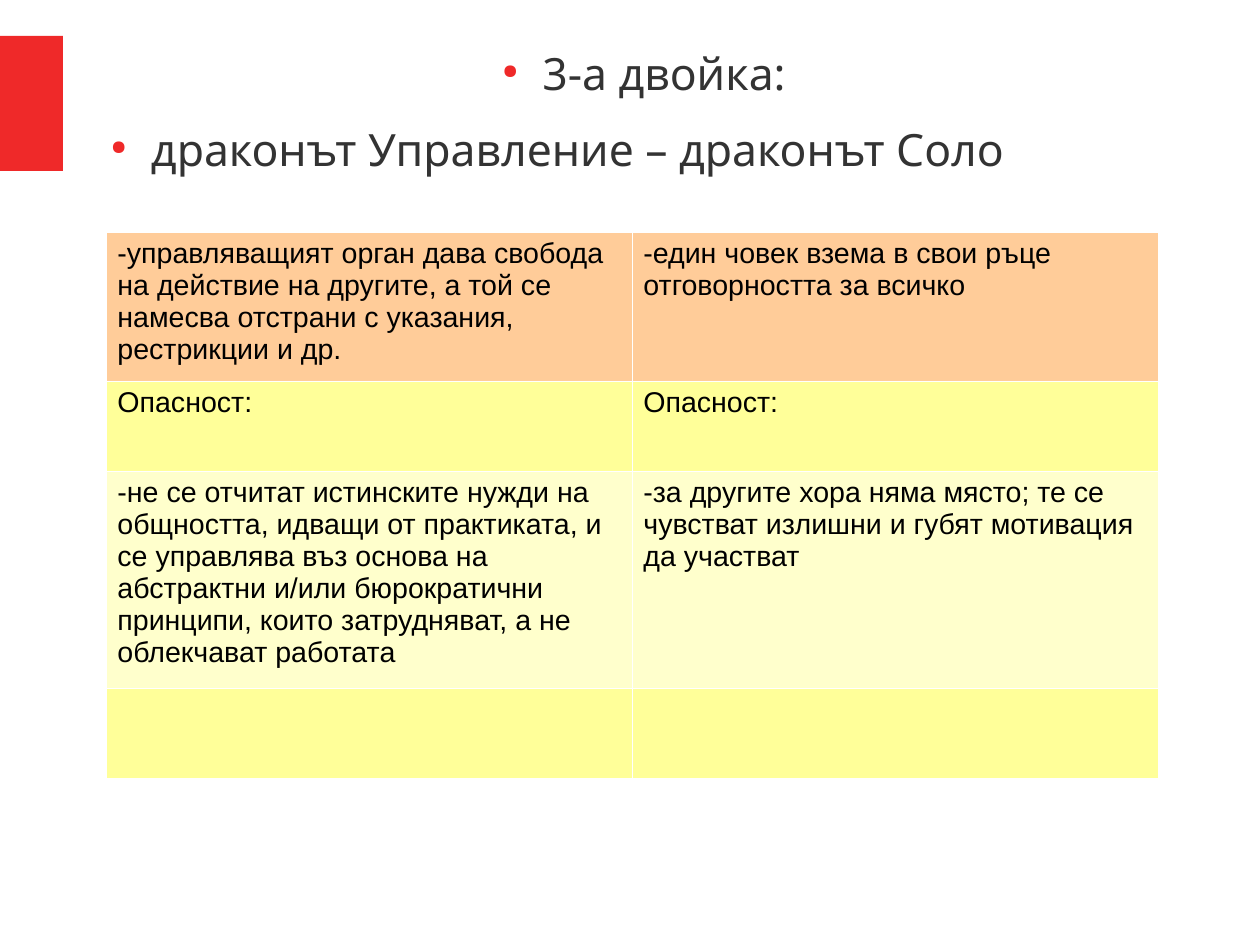
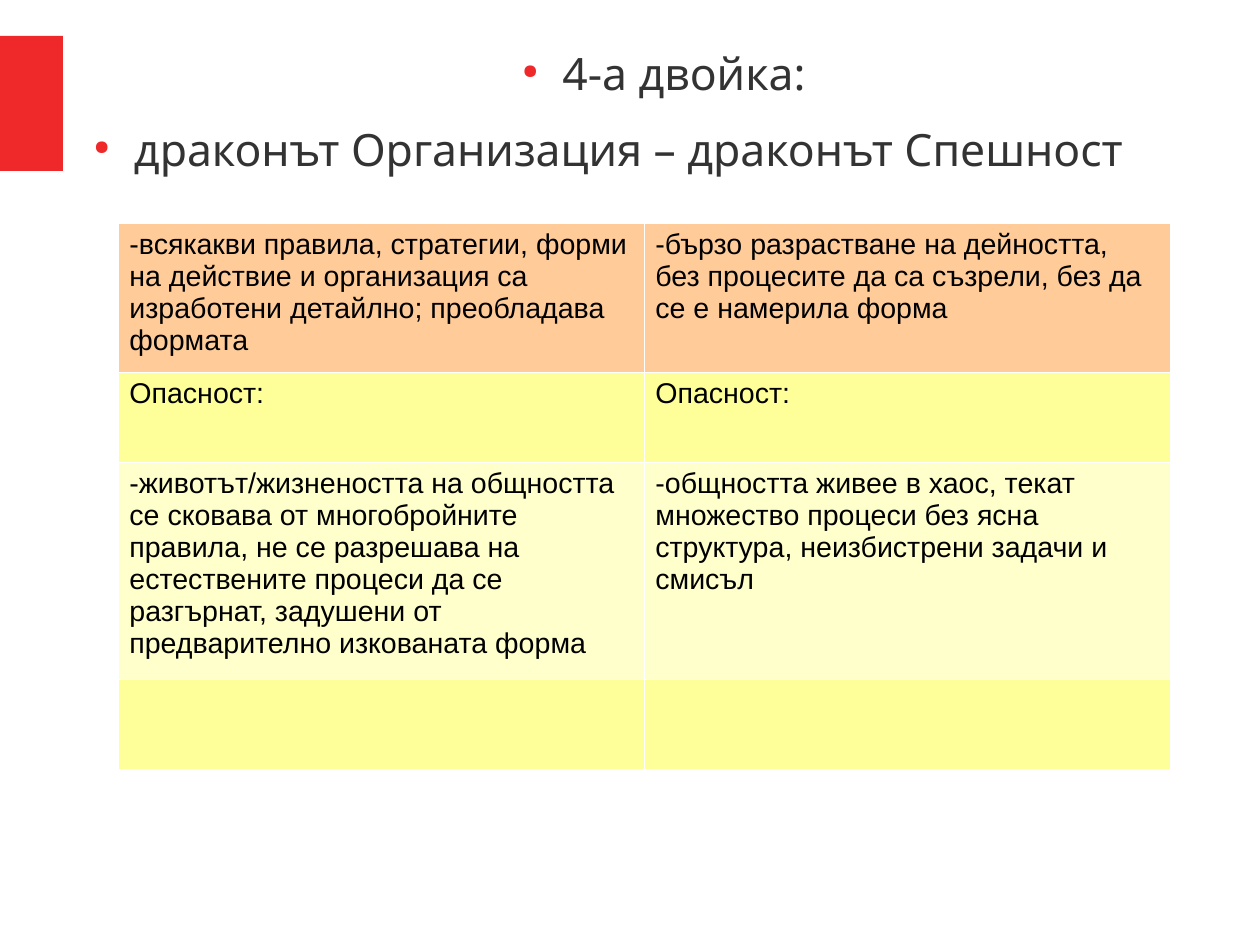
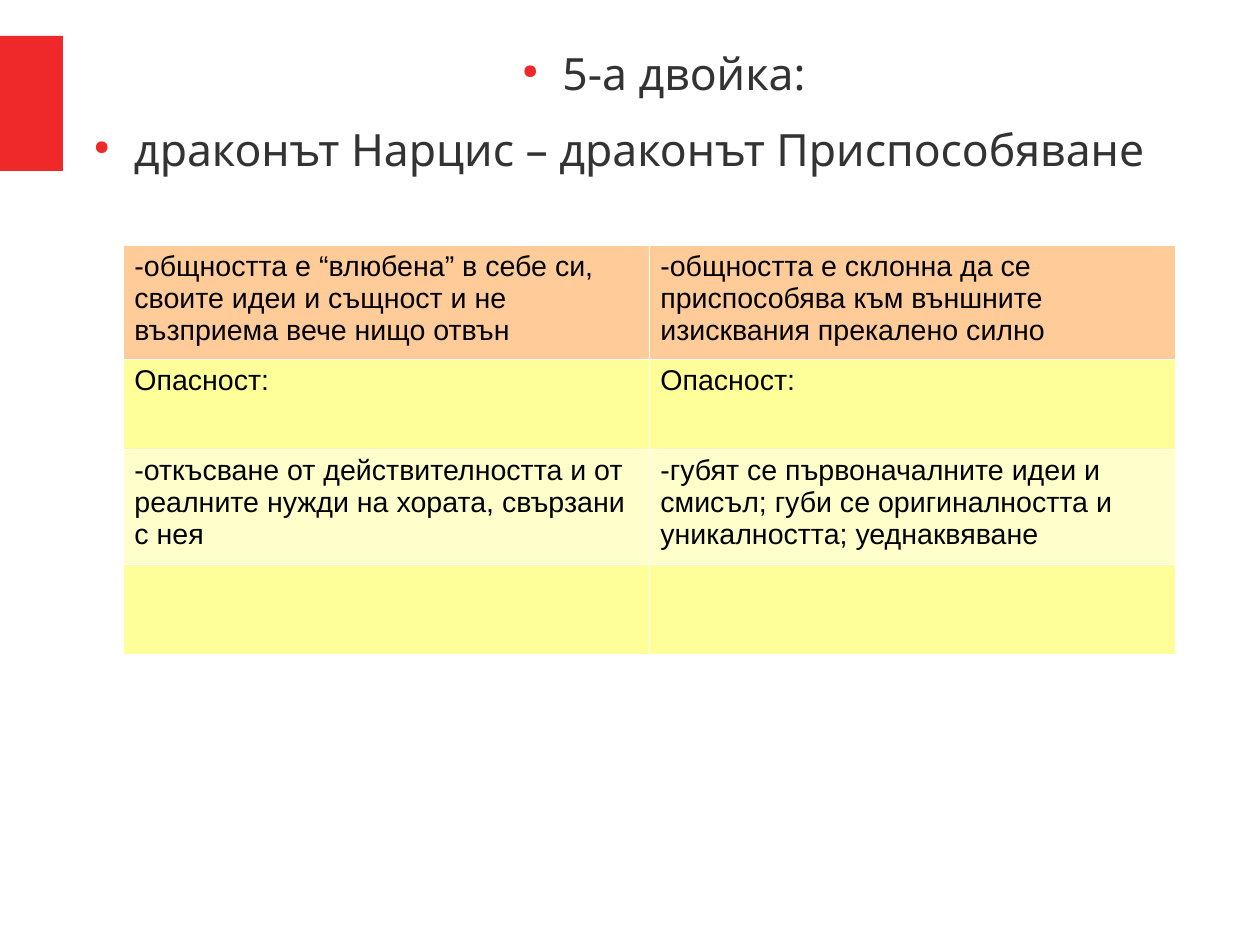
import dataclasses
import typing

import lxml.etree
import pptx
import pptx.dml.color
import pptx.enum.shapes
import pptx.enum.text
import pptx.oxml.ns
import pptx.util

SCALE = 8000
RED = "EF2929"
GREY = "333333"
BLACK = "000000"
WHITE = "FFFFFF"
FILLS = ("FFCC99", "FFFF99", "FFFFCC", "FFFF99")
COL = 526
ROW = 90
RISK = "Опасност:"
LEFT = pptx.enum.text.PP_ALIGN.LEFT
MID = pptx.enum.text.PP_ALIGN.CENTER


@dataclasses.dataclass(frozen=True)
class Box:
    x: int
    y: int
    w: int
    h: int


@dataclasses.dataclass(frozen=True)
class Pair:
    head: str
    names: str
    title: Box
    x: int
    y: int
    traits: tuple[str, str]
    risks: tuple[str, str]


WIDE = Box(80, 46, 1154, 548)

PAIRS = (
    Pair(
        "3-а двойка:",
        "драконът Управление – драконът Соло",
        Box(97, 46, 1080, 548), 106, 232,
        (
            "-управляващият орган дава свобода на действие на другите, "
            "а той се намесва отстрани с указания, рестрикции и др.",
            "-един човек взема в свои ръце отговорността за всичко",
        ),
        (
            "-не се отчитат истинските нужди на общността, идващи от практиката, "
            "и се управлява въз основа на абстрактни и/или бюрократични принципи, "
            "които затрудняват, а не облекчават работата",
            "-за другите хора няма място; те се чувстват излишни "
            "и губят мотивация да участват",
        ),
    ),
    Pair(
        "4-а двойка:",
        "драконът Организация – драконът Спешност",
        WIDE, 118, 223,
        (
            "-всякакви правила, стратегии, форми на действие и организация "
            "са изработени детайлно; преобладава формата",
            "-бързо разрастване на дейността, без процесите да са съзрели, "
            "без да се е намерила форма",
        ),
        (
            "-животът/жизнеността на общността се сковава от многобройните правила, "
            "не се разрешава на естествените процеси да се разгърнат, "
            "задушени от предварително изкованата форма",
            "-общността живее в хаос, текат множество процеси без ясна структура, "
            "неизбистрени задачи и смисъл",
        ),
    ),
    Pair(
        "5-а двойка:",
        "драконът Нарцис – драконът Приспособяване",
        WIDE, 123, 245,
        (
            "-общността е “влюбена” в себе си, своите идеи и същност "
            "и не възприема вече нищо отвън",
            "-общността е склонна да се приспособява към външните изисквания "
            "прекалено силно",
        ),
        (
            "-откъсване от действителността и от реалните нужди на хората, "
            "свързани с нея",
            "-губят се първоначалните идеи и смисъл; губи се оригиналността "
            "и уникалността; уеднаквяване",
        ),
    ),
)


def px(size: int) -> pptx.util.Emu:
    return pptx.util.Emu(size * SCALE)


def place(box: Box) -> tuple[pptx.util.Emu, ...]:
    return tuple(px(size) for size in dataclasses.astuple(box))


def tint(code: str) -> pptx.dml.color.RGBColor:
    return pptx.dml.color.RGBColor.from_string(code)


def node(root: typing.Any, tag: str, **attrs: str) -> typing.Any:
    return lxml.etree.SubElement(root, pptx.oxml.ns.qn(tag), attrs)


def write(para: typing.Any, text: str, *, font: str, size: int,
          color: str, align: typing.Any = LEFT) -> None:
    para.alignment = align
    run = para.add_run()
    run.text = text
    run.font.name = font
    run.font.size = pptx.util.Pt(size)
    run.font.bold = False
    run.font.color.rgb = tint(color)


def dot(para: typing.Any) -> None:
    para.space_after = pptx.util.Pt(14.1)
    props = para._p.get_or_add_pPr()
    props.set("marL", str(px(54)))
    props.set("indent", str(px(-40)))
    node(node(props, "a:buClr"), "a:srgbClr", val=RED)
    node(props, "a:buSzPct", val="45000")
    node(props, "a:buChar", char="●")


def edge(cell: typing.Any) -> None:
    props = cell._tc.get_or_add_tcPr()
    for tag in ("a:lnL", "a:lnR", "a:lnT", "a:lnB"):
        line = node(props, tag, w=str(pptx.util.Pt(0.06)))
        node(node(line, "a:solidFill"), "a:srgbClr", val=WHITE)


def band(slide: typing.Any) -> None:
    shape = slide.shapes.add_shape(
        pptx.enum.shapes.MSO_SHAPE.RECTANGLE, *place(Box(0, 36, 63, 135)))
    shape.shadow.inherit = False
    shape.fill.solid()
    shape.fill.fore_color.rgb = tint(RED)
    shape.line.fill.background()


def title(slide: typing.Any, pair: Pair) -> None:
    frame = slide.shapes.add_textbox(*place(pair.title)).text_frame
    frame.word_wrap = True
    frame.margin_left = frame.margin_right = 0
    frame.margin_top = frame.margin_bottom = 0
    first = frame.paragraphs[0]
    lines = ((first, pair.head, MID), (frame.add_paragraph(), pair.names, LEFT))
    for para, text, align in lines:
        write(para, text, font="Noto Sans", size=28, color=GREY, align=align)
        dot(para)


def grid(slide: typing.Any, pair: Pair) -> None:
    rows = (pair.traits, (RISK, RISK), pair.risks, ("", ""))
    box = Box(pair.x, pair.y, 2 * COL, len(rows) * ROW)
    table = slide.shapes.add_table(len(rows), 2, *place(box)).table
    table.first_row = table.horz_banding = False
    for r, (texts, fill) in enumerate(zip(rows, FILLS)):
        for c, text in enumerate(texts):
            cell = table.cell(r, c)
            edge(cell)
            cell.fill.solid()
            cell.fill.fore_color.rgb = tint(fill)
            if text:
                write(cell.text_frame.paragraphs[0], text,
                      font="Arial", size=18, color=BLACK)


def main() -> None:
    deck = pptx.Presentation()
    deck.slide_width, deck.slide_height = px(1260), px(945)
    for pair in PAIRS:
        slide = deck.slides.add_slide(deck.slide_layouts[6])
        band(slide)
        title(slide, pair)
        grid(slide, pair)
    deck.save("out.pptx")


if __name__ == "__main__":
    main()
